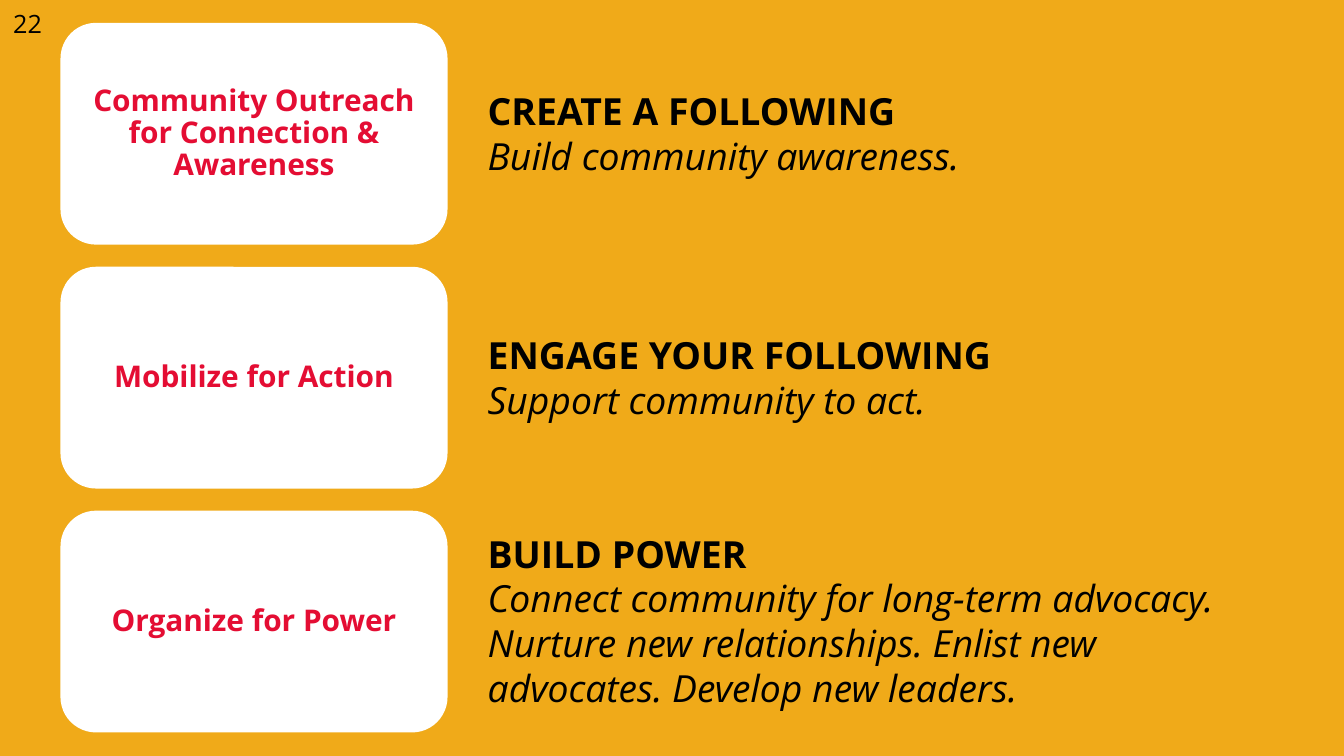
from pptx import Presentation
from pptx.dml.color import RGBColor
from pptx.enum.shapes import MSO_SHAPE
from pptx.enum.text import MSO_ANCHOR, PP_ALIGN
from pptx.util import Inches, Pt

ROUNDED = MSO_SHAPE.ROUNDED_RECTANGLE
MIDDLE = MSO_ANCHOR.MIDDLE
CENTER = PP_ALIGN.CENTER

GOLD = RGBColor(0xF0, 0xAA, 0x19)
WHITE = RGBColor(0xFF, 0xFF, 0xFF)
RED = RGBColor(0xE4, 0x0D, 0x33)
BLACK = RGBColor(0, 0, 0)
FONT = "Open Sans"

# Row grid, in inches
LEFT, TOP, LAST = 0.45, 0.17, 3.8
CARD_W, CARD_H = 2.88, 1.65
GAP = 0.2

# Card label, heading, detail lines, note width, note height
ROWS = [
    ("Community Outreach for Connection & Awareness", "CREATE A FOLLOWING",
     ["Build community awareness."], 4.38, 0.77),
    ("Mobilize for Action", "ENGAGE YOUR FOLLOWING",
     ["Support community to act."], 4.38, 0.77),
    ("Organize for Power", "BUILD POWER",
     ["Connect community for long-term advocacy.",
      "Nurture new relationships. Enlist new advocates. Develop new leaders."],
     5.91, 1.45),
]


def style(para, size, color, bold=False, italic=False):
    font = para.font
    font.name, font.size = FONT, Pt(size)
    font.bold, font.italic = bold, italic
    font.color.rgb = color


def add_text(slide, x, y, w, h, lines):
    box = slide.shapes.add_textbox(Inches(x), Inches(y), Inches(w), Inches(h))
    frame = box.text_frame
    frame.word_wrap = True
    frame.text = "\n".join(lines)
    return frame


def add_card(slide, x, y, label):
    card = slide.shapes.add_shape(
        ROUNDED, Inches(x), Inches(y), Inches(CARD_W), Inches(CARD_H))
    card.adjustments[0] = 0.16
    card.shadow.inherit = False
    card.fill.solid()
    card.fill.fore_color.rgb = WHITE
    card.line.fill.background()
    frame = card.text_frame
    frame.word_wrap = True
    frame.vertical_anchor = MIDDLE
    frame.margin_left = frame.margin_right = Inches(0.02)
    frame.text = label
    para = frame.paragraphs[0]
    para.alignment = CENTER
    para.line_spacing = 0.9
    style(para, 16, RED, bold=True)


def add_row(slide, x, y, label, head, lines, w, h):
    add_card(slide, x, y, label)
    # The note is centred on the height of its card
    frame = add_text(slide, x + CARD_W + GAP, y + (CARD_H - h) / 2, w, h,
                     [head] + lines)
    for i, para in enumerate(frame.paragraphs):
        style(para, 20, BLACK, bold=i == 0, italic=i > 0)


def main():
    prs = Presentation()
    # Widescreen, 16:9
    prs.slide_width = Inches(10)
    prs.slide_height = Inches(10 * 9 / 16)
    slide = prs.slides.add_slide(prs.slide_layouts[6])
    slide.background.fill.solid()
    slide.background.fill.fore_color.rgb = GOLD

    # Page number
    page = add_text(slide, 0, 0.01, 0.45, 0.33, ["22"])
    style(page.paragraphs[0], 13.5, BLACK)

    # Evenly spaced rows of card and note
    step = (LAST - TOP) / (len(ROWS) - 1)
    for i, row in enumerate(ROWS):
        add_row(slide, LEFT, TOP + i * step, *row)

    prs.save("out.pptx")


if __name__ == "__main__":
    main()
